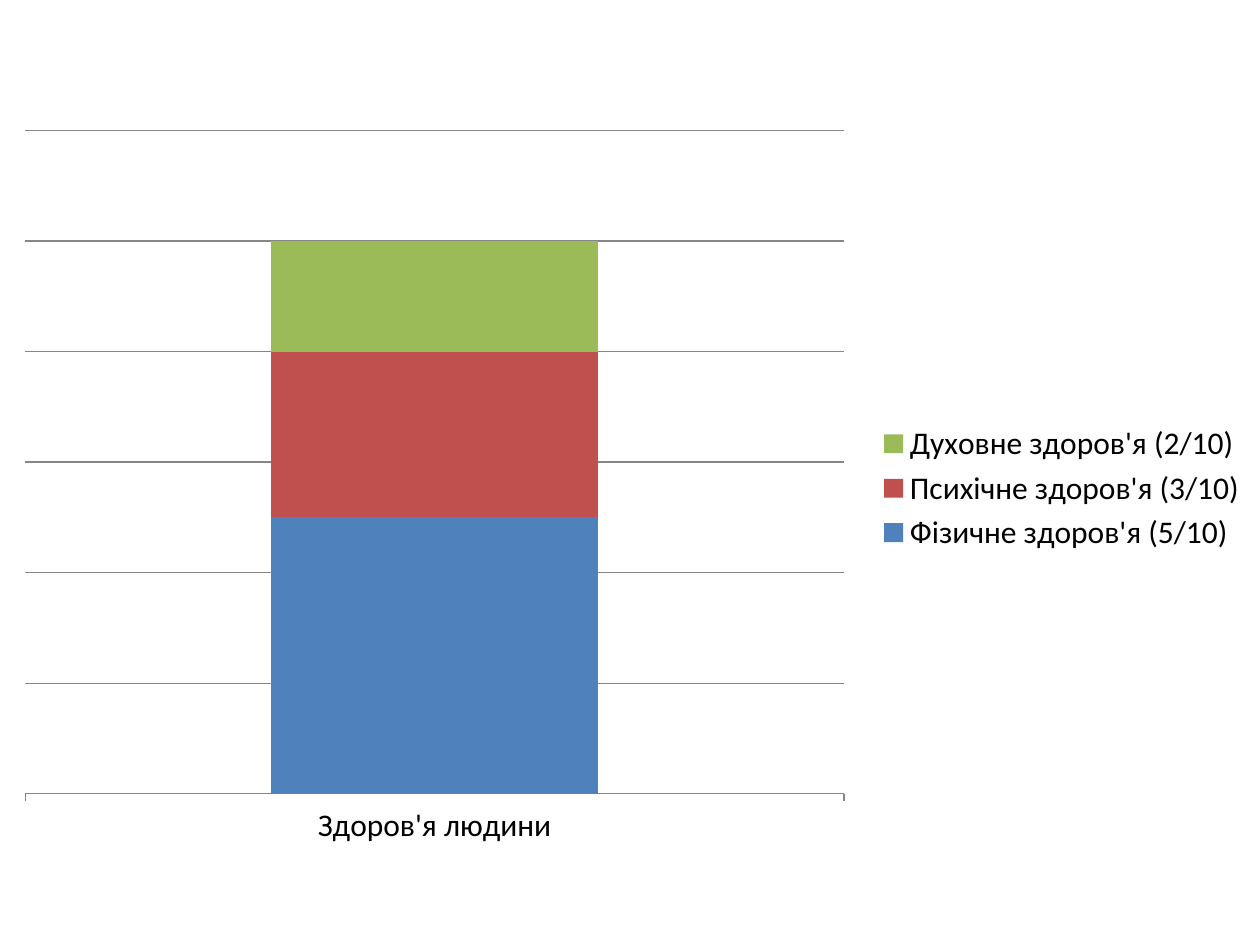
import pptx
import pptx.chart.data
import pptx.dml.color
import pptx.enum.chart
import pptx.util
from lxml import etree
from pptx.oxml.ns import qn

Pt = pptx.util.Pt
ENUM = pptx.enum.chart

THEME = {
    "font": "Calibri",
    "size": 18,
    "text": "000000",
    "line": "868686",
    "fills": ("4F81BD", "C0504D", "9BBB59"),
}

GROUP = "Здоров'я людини"
PARTS = (
    ("Фізичне здоров'я (5/10)", 100),
    ("Психічне здоров'я (3/10)", 60),
    ("Духовне здоров'я (2/10)", 40),
)
# Inner plot area as fractions of the chart
PLOT = {"x": 0.02, "y": 0.02, "w": 0.65, "h": 0.89}


def color(name):
    return pptx.dml.color.RGBColor.from_string(name)


def apply(item, values):
    for key, value in values.items():
        setattr(item, key, value)


def style_line(line):
    line.color.rgb = color(THEME["line"])
    line.width = Pt(0.75)


def place_plot(chart):
    """Fix the inner plot area; this has no public method."""
    area = chart._chartSpace.chart.plotArea
    for old in area.findall(qn("c:layout")):
        area.remove(old)
    layout = etree.Element(qn("c:layout"))
    manual = etree.SubElement(layout, qn("c:manualLayout"))
    rules = {"layoutTarget": "inner", "xMode": "edge", "yMode": "edge", **PLOT}
    for tag, value in rules.items():
        etree.SubElement(manual, qn(f"c:{tag}")).set("val", str(value))
    area.insert(0, layout)


def add_stack(slide):
    data = pptx.chart.data.CategoryChartData()
    data.categories = [GROUP]
    for name, value in PARTS:
        data.add_series(name, [value])
    frame = slide.shapes.add_chart(
        ENUM.XL_CHART_TYPE.COLUMN_STACKED, Pt(0), Pt(66), Pt(720), Pt(426), data)
    return frame.chart


def style_stack(chart):
    apply(chart, {"has_title": False, "has_legend": True})
    apply(chart.font, {"name": THEME["font"], "size": Pt(THEME["size"])})
    chart.font.color.rgb = color(THEME["text"])

    # Bars
    plot = chart.plots[0]
    apply(plot, {"gap_width": 150, "overlap": 100, "vary_by_categories": False})
    for series, fill in zip(plot.series, THEME["fills"]):
        series.format.fill.solid()
        series.format.fill.fore_color.rgb = color(fill)

    # Axes
    tick = ENUM.XL_TICK_MARK
    apply(chart.category_axis, {"major_tick_mark": tick.OUTSIDE,
                                "minor_tick_mark": tick.NONE})
    style_line(chart.category_axis.format.line)
    value = chart.value_axis
    apply(value, {"visible": False, "has_major_gridlines": True,
                  "minimum_scale": 0, "maximum_scale": 240, "major_unit": 40})
    apply(value.tick_labels, {"number_format": "0%",
                              "number_format_is_linked": False})
    style_line(value.major_gridlines.format.line)

    # Legend
    apply(chart.legend, {"position": ENUM.XL_LEGEND_POSITION.RIGHT,
                         "include_in_layout": False})
    place_plot(chart)


def main():
    deck = pptx.Presentation()
    apply(deck, {"slide_width": Pt(720), "slide_height": Pt(540)})
    slide = deck.slides.add_slide(deck.slide_layouts[6])
    style_stack(add_stack(slide))
    deck.save("out.pptx")


if __name__ == "__main__":
    main()
